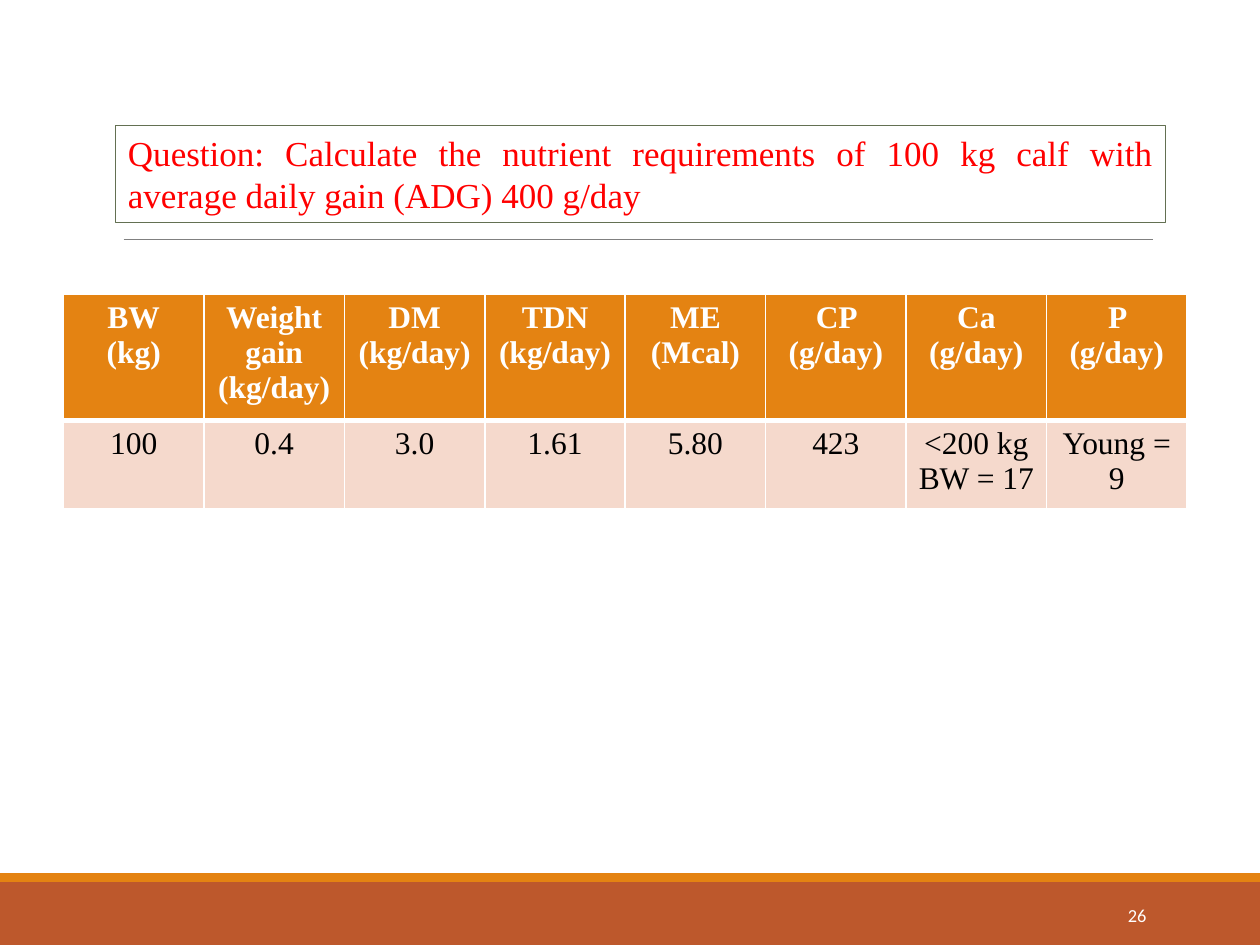
from dataclasses import dataclass

from lxml.etree import SubElement as Sub
from pptx import Presentation
from pptx.dml.color import RGBColor as Rgb
from pptx.enum.shapes import MSO_CONNECTOR as Link, MSO_SHAPE as Form
from pptx.enum.text import MSO_ANCHOR as Anchor, PP_ALIGN as Align
from pptx.oxml.ns import qn
from pptx.util import Cm, Pt

WHITE, ORANGE, RUST, BLUSH = "FFFFFF", "E48312", "BD582C", "F5D9CC"
SERIF = "Times New Roman"


@dataclass
class Box:
    left: float
    top: float
    width: float
    height: float

    def lengths(self) -> tuple:
        return Cm(self.left), Cm(self.top), Cm(self.width), Cm(self.height)


@dataclass
class Style:
    size: float
    color: str
    align: Align
    font: str = SERIF
    bold: bool = False


@dataclass
class Band:
    """One table row: its cells, text style, fill, and edge widths in points."""
    cells: list[str]
    height: float
    style: Style
    fill: str
    top: float
    base: float


def paint(part, color: str) -> None:
    part.solid()
    part.fore_color.rgb = Rgb.from_string(color)


def write(frame, text: str, style: Style) -> None:
    """Put each line of the text in its own paragraph."""
    frame.word_wrap = True
    for i, line in enumerate(text.split("\n")):
        para = frame.add_paragraph() if i else frame.paragraphs[0]
        para.alignment = style.align
        run = para.add_run()
        run.text = line
        run.font.name = style.font
        run.font.size = Pt(style.size)
        run.font.bold = style.bold
        paint(run.font.fill, style.color)


def add_bar(slide, box: Box, color: str) -> None:
    bar = slide.shapes.add_shape(Form.RECTANGLE, *box.lengths())
    bar.shadow.inherit = False
    paint(bar.fill, color)
    bar.line.fill.background()


def add_rule(slide, left: float, right: float, y: float) -> None:
    rule = slide.shapes.add_connector(
        Link.STRAIGHT, Cm(left), Cm(y), Cm(right), Cm(y))
    paint(rule.line.fill, "808080")
    rule.line.width = Pt(0.5)
    Sub(rule._element.spPr, qn("a:effectLst"))


def add_text(slide, box: Box, text: str, style: Style):
    label = slide.shapes.add_textbox(*box.lengths())
    write(label.text_frame, text, style)
    return label


def edge(cell, band: Band) -> None:
    """Draw white borders; they must precede the cell fill in the XML."""
    props = cell._tc.get_or_add_tcPr()
    for side, width in zip("LRTB", (1, 1, band.top, band.base)):
        line = Sub(props, qn(f"a:ln{side}"), w=str(Pt(width)))
        Sub(Sub(line, qn("a:solidFill")), qn("a:srgbClr"), val=WHITE)


def add_grid(slide, left: float, top: float, width: float,
             bands: list[Band]) -> None:
    count = len(bands[0].cells)
    box = Box(left, top, width, sum(band.height for band in bands))
    grid = slide.shapes.add_table(len(bands), count, *box.lengths()).table
    grid.horz_banding = False
    for col in grid.columns:
        col.width = Cm(width / count)
    for row, band in zip(grid.rows, bands):
        row.height = Cm(band.height)
        for cell, text in zip(row.cells, band.cells):
            edge(cell, band)
            paint(cell.fill, band.fill)
            write(cell.text_frame, text, band.style)


def main() -> None:
    deck = Presentation()
    deck.slide_width, deck.slide_height = Cm(25.4), Cm(19.05)
    slide = deck.slides.add_slide(deck.slide_layouts[6])

    add_bar(slide, Box(0, 17.78, 25.4, 1.27), RUST)
    add_bar(slide, Box(0, 17.6, 25.4, 0.18), ORANGE)
    add_rule(slide, 2.49, 23.24, 4.83)

    page = add_text(slide, Box(20.62, 17.93, 2.74, 1.02), "26",
                    Style(10.5, WHITE, Align.RIGHT, "Calibri"))
    page.text_frame.vertical_anchor = Anchor.MIDDLE

    task = add_text(
        slide, Box(2.33, 2.53, 21.17, 1.96),
        "Question: Calculate the nutrient requirements of 100 kg calf with "
        "average daily gain (ADG) 400 g/day",
        Style(20, "FF0000", Align.JUSTIFY))
    paint(task.line.fill, "637052")
    task.line.width = Pt(0.75)

    heads = ["BW\n(kg)", "Weight gain (kg/day)", "DM\n(kg/day)",
             "TDN (kg/day)", "ME (Mcal)", "CP (g/day)", "Ca (g/day)",
             "P (g/day)"]
    needs = ["100", "0.4", "3.0", "1.61", "5.80", "423",
             "<200 kg BW = 17", "Young = 9"]
    add_grid(slide, 1.28, 5.93, 22.65, [
        Band(heads, 2.52, Style(18, WHITE, Align.CENTER, bold=True),
             ORANGE, 1, 3),
        Band(needs, 1.79, Style(18, "000000", Align.CENTER), BLUSH, 3, 1),
    ])
    deck.save("out.pptx")


if __name__ == "__main__":
    main()
